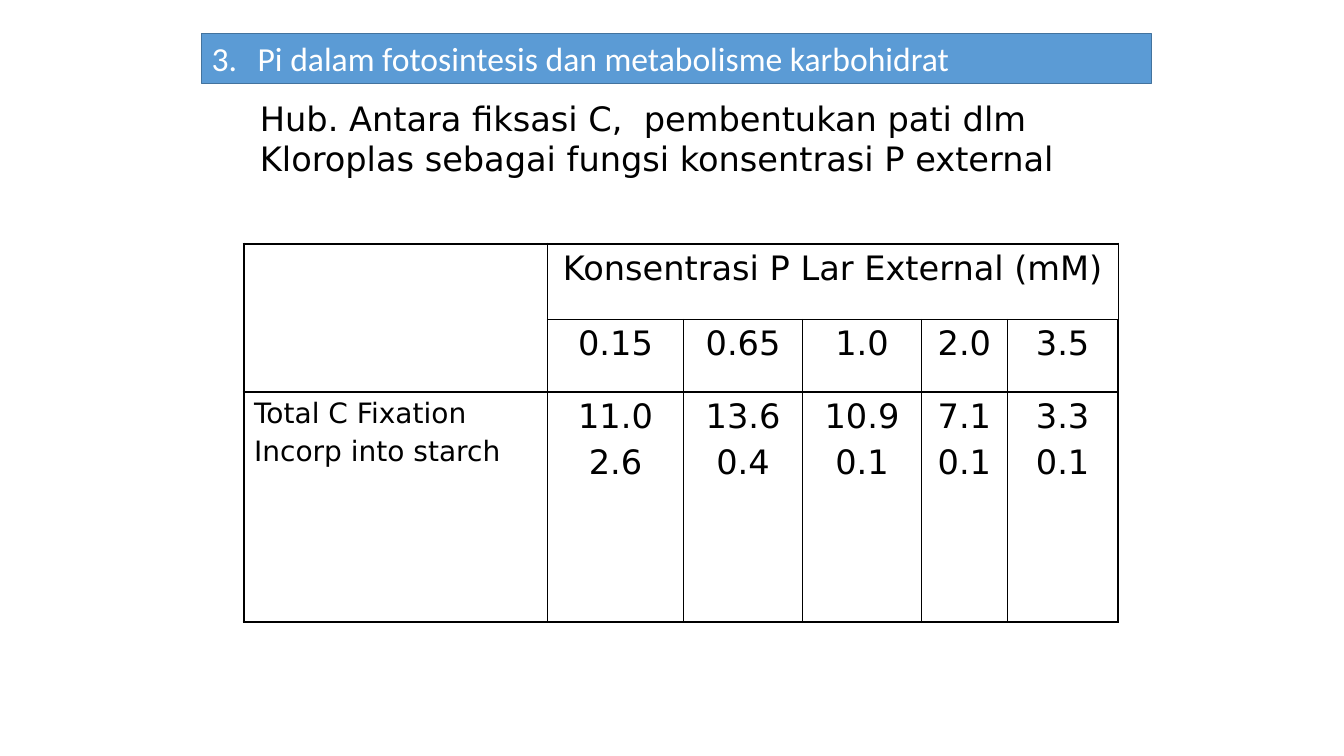
from lxml.etree import SubElement
from pptx import Presentation
from pptx.dml.color import RGBColor
from pptx.enum.text import MSO_ANCHOR as Anchor, MSO_AUTO_SIZE as AutoSize, PP_ALIGN as Align
from pptx.oxml import parse_xml
from pptx.oxml.ns import nsdecls, qn
from pptx.util import Inches, Pt

COLORS = {"bar": "5B9BD5", "bar_line": "43739E", "light": "FFFFFF", "ink": "000000"}
THIN, THICK = 1, 2.25


class Deck:
    """Holds the text style and the current slide."""

    head_font, text_font, size = "Calibri", "DejaVu Sans", 24

    def __init__(self, width, height):
        self.prs = Presentation()
        self.prs.slide_width, self.prs.slide_height = Inches(width), Inches(height)
        self.s = self.prs.slides.add_slide(self.prs.slide_layouts[5])

    def color(self, name):
        return RGBColor.from_string(COLORS[name])

    def add_lines(self, tf, lines, size=None, font=None, color="ink", align=Align.LEFT, before=0):
        size = size or self.size
        for i, line in enumerate(lines):
            p = tf.paragraphs[0] if i == 0 else tf.add_paragraph()
            p.alignment, p.space_before = align, Pt(size * before)
            r = p.add_run()
            r.text = line
            r.font.size, r.font.name = Pt(size), font or self.text_font
            r.font.color.rgb = self.color(color)

    def title(self, box, text, number):
        sp = self.s.shapes.title
        sp.left, sp.top, sp.width, sp.height = map(Inches, box)
        sp.fill.solid()
        sp.fill.fore_color.rgb = self.color("bar")
        sp.line.color.rgb = self.color("bar_line")
        sp.line.width = Pt(THIN)
        tf = sp.text_frame
        tf.auto_size, tf.vertical_anchor, tf.word_wrap = AutoSize.NONE, Anchor.TOP, True
        self.add_lines(tf, [text], font=self.head_font, color="light")
        # Automatic number with a hanging indent
        pPr = tf.paragraphs[0]._p.get_or_add_pPr()
        pPr.set("marL", str(Inches(0.38)))
        pPr.set("indent", str(Inches(-0.38)))
        SubElement(pPr, qn("a:buFont"), typeface=self.head_font)
        SubElement(pPr, qn("a:buAutoNum"), type="arabicPeriod", startAt=str(number))

    def text(self, box, lines):
        tf = self.s.shapes.add_textbox(*map(Inches, box)).text_frame
        tf.word_wrap = True
        self.add_lines(tf, lines)

    def table(self, left, top, widths, heights):
        rows, cols = len(heights), len(widths)
        frame = self.s.shapes.add_table(rows, cols, Inches(left), Inches(top),
                                        Inches(sum(widths)), Inches(sum(heights)))
        table = frame.table
        for col, width in zip(table.columns, widths):
            col.width = Inches(width)
        for row, height in zip(table.rows, heights):
            row.height = Inches(height)
        # Thick outer frame, thin inner rules
        for y in range(rows):
            for x in range(cols):
                cell = table.cell(y, x)
                cell.fill.background()
                outer = {"L": x == 0, "R": x == cols - 1, "T": y == 0, "B": y == rows - 1}
                for i, (side, edge) in enumerate(outer.items()):
                    self.border(cell, i, side, THICK if edge else THIN)
        return table

    def border(self, cell, index, side, width):
        cell._tc.get_or_add_tcPr().insert(index, parse_xml(
            f'<a:ln{side} {nsdecls("a")} w="{Pt(width)}"><a:solidFill>'
            f'<a:srgbClr val="{COLORS["ink"]}"/></a:solidFill></a:ln{side}>'))

    def cell(self, table, y, x, lines, size=None, align=Align.CENTER):
        self.add_lines(table.cell(y, x).text_frame, lines, size, align=align, before=0.2)


def main():
    deck = Deck(13.33, 7.5)

    # Heading and caption
    deck.title((2, 0.33, 9.42, 0.5), " Pi dalam fotosintesis dan metabolisme karbohidrat", 3)
    deck.text((2.48, 0.92, 8.43, 0.91), [
        "Hub. Antara fiksasi C,  pembentukan pati dlm",
        "Kloroplas sebagai fungsi konsentrasi P external",
    ])

    # Table: concentration, total fixation, starch
    data = [
        ("0.15", "11.0", "2.6"),
        ("0.65", "13.6", "0.4"),
        ("1.0", "10.9", "0.1"),
        ("2.0", "7.1", "0.1"),
        ("3.5", "3.3", "0.1"),
    ]
    table = deck.table(2.42, 2.42, [3.01, 1.35, 1.18, 1.18, 0.85, 1.1], [0.75, 0.72, 2.28])
    table.cell(0, 0).merge(table.cell(1, 0))
    table.cell(0, 1).merge(table.cell(0, 5))
    deck.cell(table, 0, 1, ["Konsentrasi P Lar External (mM)"])
    deck.cell(table, 2, 0, ["Total C Fixation", "Incorp into starch"], 20, Align.LEFT)
    for x, (concentration, *values) in enumerate(data, 1):
        deck.cell(table, 1, x, [concentration])
        deck.cell(table, 2, x, values)

    deck.prs.save("out.pptx")


if __name__ == "__main__":
    main()
